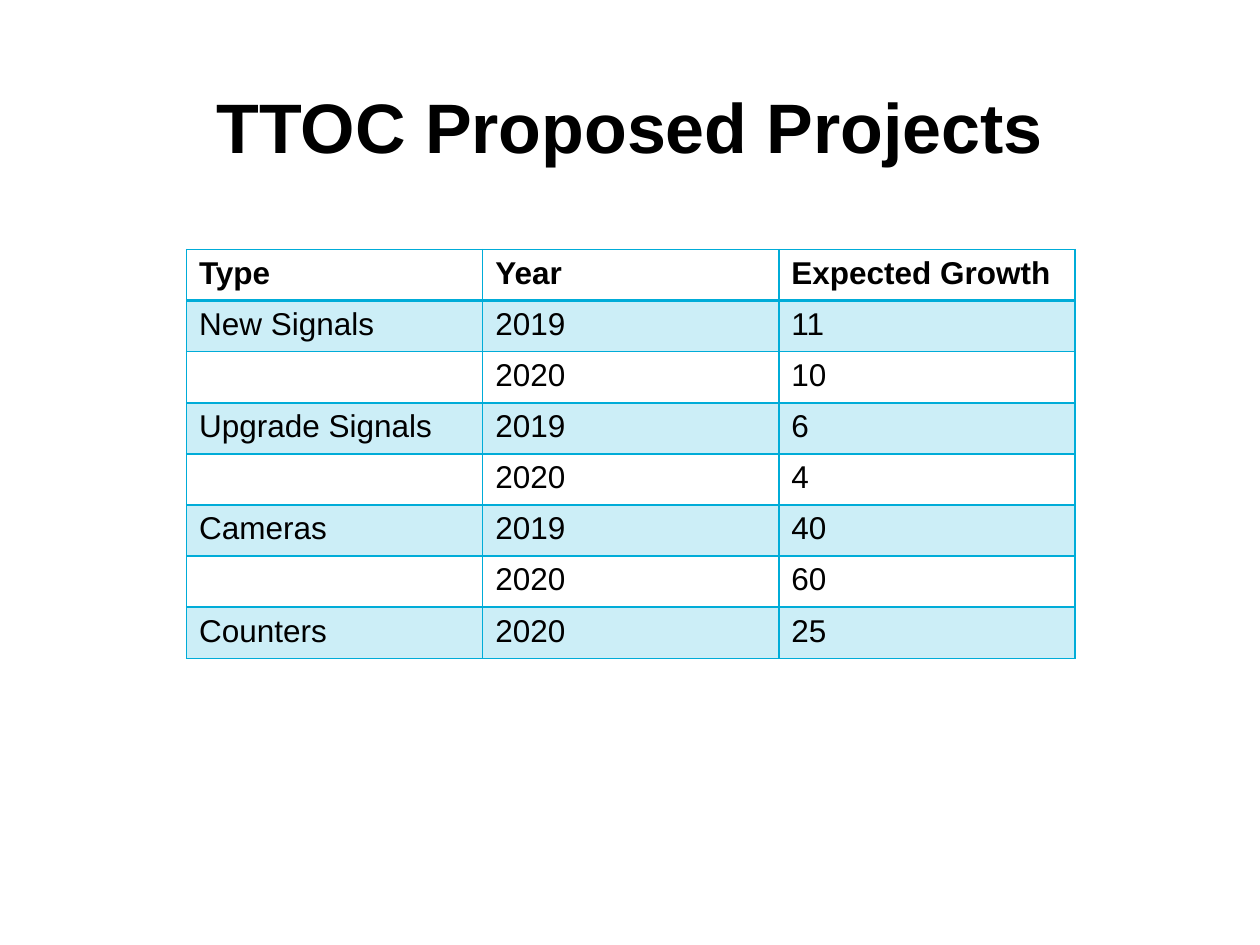
from dataclasses import dataclass
from typing import NamedTuple

from lxml.etree import SubElement
from pptx import Presentation
from pptx.dml.color import RGBColor
from pptx.enum.text import MSO_ANCHOR, PP_ALIGN
from pptx.oxml.ns import qn
from pptx.util import Cm, Pt


@dataclass(frozen=True)
class Theme:
    font: str = "Arial"
    text: str = "000000"
    accent: str = "00ACD8"
    band_alpha: int = 20
    title_size: int = 40
    body_size: int = 18
    line: float = 1
    header_line: float = 2


class Project(NamedTuple):
    type: str
    year: str
    growth: str


THEME = Theme()
HEADER = Project("Type", "Year", "Expected Growth")
PROJECTS = [
    Project("New Signals", "2019", "11"),
    Project("", "2020", "10"),
    Project("Upgrade Signals", "2019", "6"),
    Project("", "2020", "4"),
    Project("Cameras", "2019", "40"),
    Project("", "2020", "60"),
    Project("Counters", "2020", "25"),
]
COL_WIDTH, ROW_HEIGHT = Cm(5.97), Cm(1.03)


def add_run(p, text: str, size: int, bold: bool) -> None:
    r = p.add_run()
    r.text = text
    r.font.name = THEME.font
    r.font.size = Pt(size)
    r.font.bold = bold
    r.font.color.rgb = RGBColor.from_string(THEME.text)


def set_border(cell, side: str, width: float) -> None:
    ln = SubElement(cell._tc.get_or_add_tcPr(), qn(f"a:ln{side}"), w=str(Pt(width)))
    fill = SubElement(ln, qn("a:solidFill"))
    SubElement(fill, qn("a:srgbClr"), val=THEME.accent)


def set_fill(cell, banded: bool) -> None:
    if not banded:
        cell.fill.background()
        return
    cell.fill.solid()
    cell.fill.fore_color.rgb = RGBColor.from_string(THEME.accent)
    color = cell._tc.tcPr.find(qn("a:solidFill")).find(qn("a:srgbClr"))
    SubElement(color, qn("a:alpha"), val=str(THEME.band_alpha * 1000))


def format_cell(cell, text: str, row: int) -> None:
    if text:
        add_run(cell.text_frame.paragraphs[0], text, THEME.body_size, row == 0)
    # The rule under the header is shared by the first two rows
    widths = {
        "L": THEME.line,
        "R": THEME.line,
        "T": THEME.header_line if row == 1 else THEME.line,
        "B": THEME.header_line if row == 0 else THEME.line,
    }
    for side, width in widths.items():
        set_border(cell, side, width)
    set_fill(cell, row % 2 == 1)


def add_title(s, text: str) -> None:
    sp = s.shapes.title
    sp.left, sp.top, sp.width, sp.height = Cm(3.38), Cm(1.55), Cm(18.64), Cm(1.96)
    tf = sp.text_frame
    tf.word_wrap = True
    tf.vertical_anchor = MSO_ANCHOR.MIDDLE
    p = tf.paragraphs[0]
    p.alignment = PP_ALIGN.CENTER
    add_run(p, text, THEME.title_size, True)


def add_project_table(s, rows: list[Project]) -> None:
    n_rows, n_cols = len(rows), len(HEADER)
    table = s.shapes.add_table(
        n_rows, n_cols, Cm(3.76), Cm(5.03), COL_WIDTH * n_cols, ROW_HEIGHT * n_rows
    ).table
    table.horz_banding = False
    for col in table.columns:
        col.width = COL_WIDTH
    for i, project in enumerate(rows):
        table.rows[i].height = ROW_HEIGHT
        for j, text in enumerate(project):
            format_cell(table.cell(i, j), text, i)


def main() -> None:
    prs = Presentation()
    prs.slide_width, prs.slide_height = Cm(25.4), Cm(19.05)
    s = prs.slides.add_slide(prs.slide_layouts[5])

    # Heading
    add_title(s, "TTOC Proposed Projects")

    # Projects by type and year
    add_project_table(s, [HEADER, *PROJECTS])

    prs.save("out.pptx")


if __name__ == "__main__":
    main()
